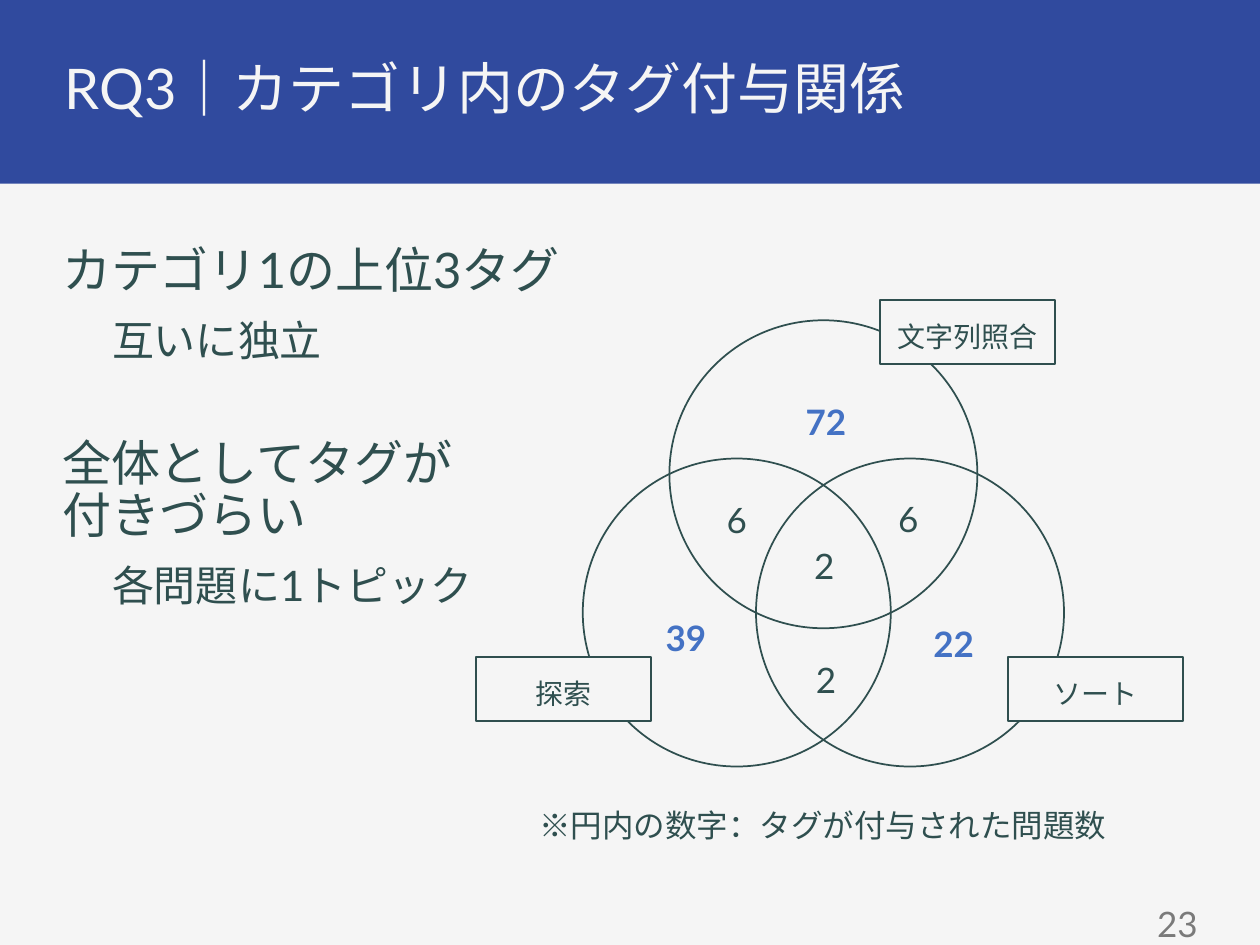
"""Build the slide on tag relations within a category, with a three-circle Venn diagram."""
from lxml.etree import SubElement
from pptx import Presentation
from pptx.dml.color import RGBColor
from pptx.enum.shapes import MSO_SHAPE
from pptx.enum.text import MSO_ANCHOR, MSO_AUTO_SIZE, PP_ALIGN
from pptx.oxml.ns import qn
from pptx.util import Pt

COLORS = {
    "background": "F5F5F5",
    "header": "304A9E",
    "text": "2F4F4F",
    "accent": "4472C4",
    "page": "7A7A7A",
}
LATIN, JAPANESE = "Lato", "Noto Sans CJK JP"


def format_paragraph(paragraph, size, color, align=PP_ALIGN.LEFT, bold=False, font=LATIN):
    paragraph.alignment = align
    for run in paragraph.runs:
        run.font.size = Pt(size)
        run.font.bold = bold
        run.font.name = font
        run.font.color.rgb = RGBColor.from_string(COLORS[color])
        SubElement(run._r.get_or_add_rPr(), qn("a:ea"), typeface=JAPANESE)


def add_shape(kind, left, top, width, height, fill=None, line=None):
    shape = slide.shapes.add_shape(kind, Pt(left), Pt(top), Pt(width), Pt(height))
    shape.shadow.inherit = False
    if fill:
        shape.fill.solid()
        shape.fill.fore_color.rgb = RGBColor.from_string(COLORS[fill])
    else:
        shape.fill.background()
    if line:
        shape.line.color.rgb = RGBColor.from_string(COLORS[line])
        shape.line.width = Pt(1)
    else:
        shape.line.fill.background()
    return shape


presentation = Presentation()
presentation.slide_width, presentation.slide_height = Pt(720), Pt(540)
slide = presentation.slides.add_slide(presentation.slide_layouts[1])
slide.background.fill.solid()
slide.background.fill.fore_color.rgb = RGBColor.from_string(COLORS["background"])

header = add_shape(MSO_SHAPE.RECTANGLE, -1.5, -1.5, 723, 106.5, "header")
slide.shapes._spTree.insert(2, header._element)

title = slide.shapes.title
title.left, title.top, title.width, title.height = Pt(31), Pt(31), Pt(657), Pt(42.5)
title.text_frame.text = "RQ3｜カテゴリ内のタグ付与関係"
title.text_frame.auto_size = MSO_AUTO_SIZE.NONE
title.text_frame.vertical_anchor = MSO_ANCHOR.MIDDLE
title.text_frame.margin_left = title.text_frame.margin_right = Pt(6)
title.text_frame.paragraphs[0].line_spacing = 0.9
format_paragraph(title.text_frame.paragraphs[0], 32, "background")

body = slide.placeholders[1]
body.left, body.top, body.width, body.height = Pt(31), Pt(136), Pt(657), Pt(373)
frame = body.text_frame
frame.auto_size = MSO_AUTO_SIZE.NONE
frame.margin_left = frame.margin_top = frame.margin_right = frame.margin_bottom = Pt(4.5)
points = [
    ("カテゴリ1の上位3タグ", 0, 28, 0),
    ("互いに独立", 1, 24, 12),
    ("全体としてタグが\v付きづらい", 0, 28, 42),
    ("各問題に1トピック", 1, 24, 12),
]
for index, (text, level, size, space) in enumerate(points):
    paragraph = frame.add_paragraph() if index else frame.paragraphs[0]
    paragraph.text = text
    paragraph.level = level
    paragraph.line_spacing = 0.9
    paragraph.space_before = Pt(space)
    format_paragraph(paragraph, size, "text")
    properties = paragraph._p.get_or_add_pPr()
    properties.set("marL", str(Pt(28.5 * level)))
    properties.set("indent", "0")
    SubElement(properties, qn("a:buNone"))

for center_x, center_y in [(470.5, 271), (421, 350), (520, 350)]:
    add_shape(MSO_SHAPE.OVAL, center_x - 88, center_y - 88, 176, 176, line="text")

for text, left, top in [("文字列照合", 503, 171.5), ("探索", 272, 375.5), ("ソート", 576, 375.5)]:
    label = add_shape(MSO_SHAPE.RECTANGLE, left, top, 100, 36.5, "background", "text")
    label.text_frame.text = text
    label.text_frame.margin_top = Pt(8)
    label.text_frame.vertical_anchor = MSO_ANCHOR.MIDDLE
    format_paragraph(label.text_frame.paragraphs[0], 16, "text", PP_ALIGN.CENTER, font=JAPANESE)

center, right, left = PP_ALIGN.CENTER, PP_ALIGN.RIGHT, PP_ALIGN.LEFT
texts = [
    ("2", 442, 307.5, 58, 31.5, 20, "text", center, False),
    ("6", 392, 281.5, 58, 31.5, 20, "text", center, False),
    ("6", 490, 281, 58, 31.5, 20, "text", center, False),
    ("2", 443, 373, 58, 31.5, 20, "text", center, False),
    ("72", 443, 225.5, 58, 31.5, 20, "accent", center, True),
    ("39", 363, 348.5, 58, 31.5, 20, "accent", center, True),
    ("22", 516, 352, 58, 31.5, 20, "accent", center, True),
    ("※円内の数字：タグが付与された問題数", 301, 457, 342, 29, 18, "text", left, False),
    ("23", 527, 512, 164.5, 28, 20, "page", right, False),
]
for text, x, y, width, height, size, color, align, bold in texts:
    box = slide.shapes.add_textbox(Pt(x), Pt(y), Pt(width), Pt(height))
    box.text_frame.word_wrap = True
    box.text_frame.text = text
    format_paragraph(box.text_frame.paragraphs[0], size, color, align, bold)

presentation.save("out.pptx")
